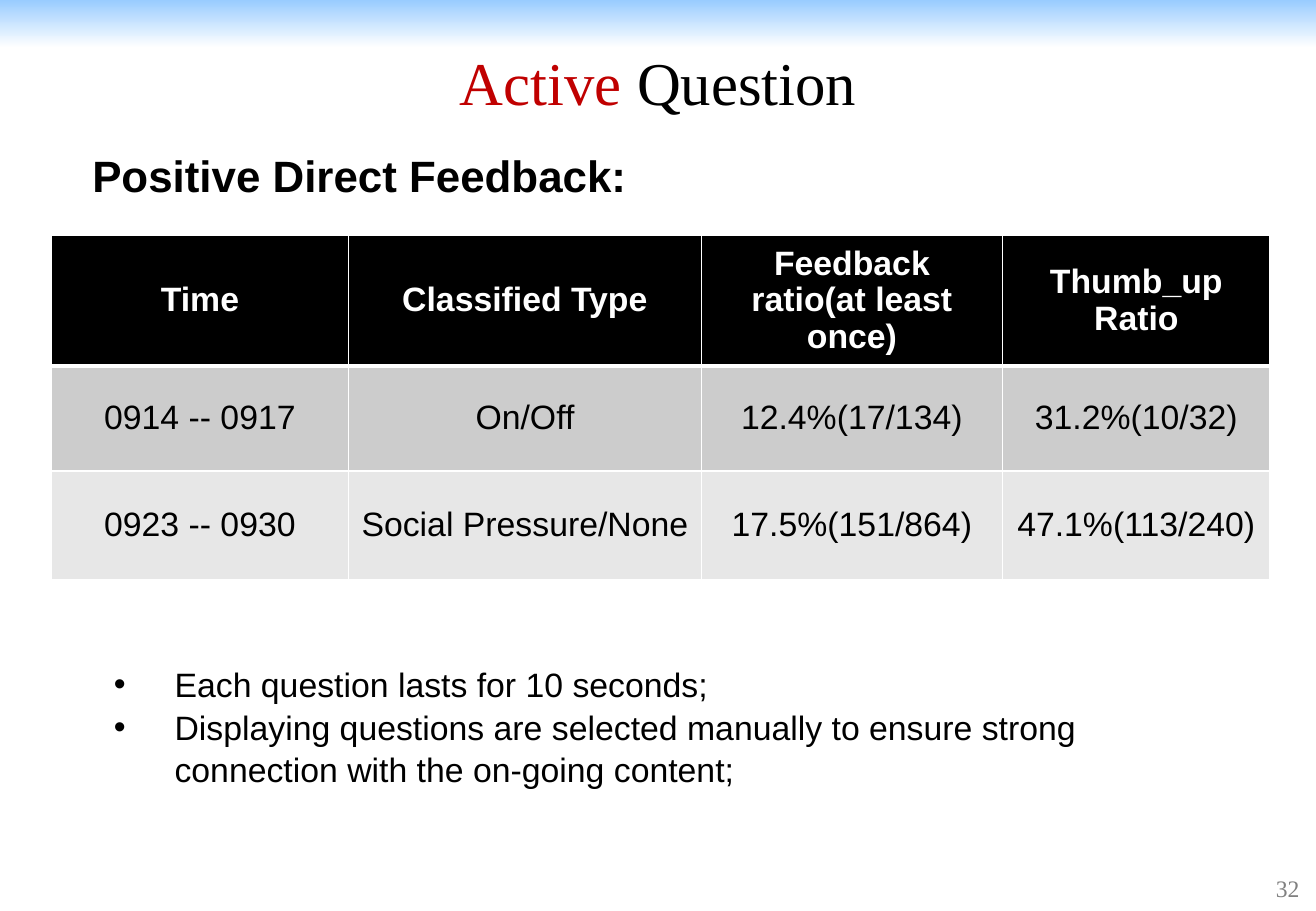
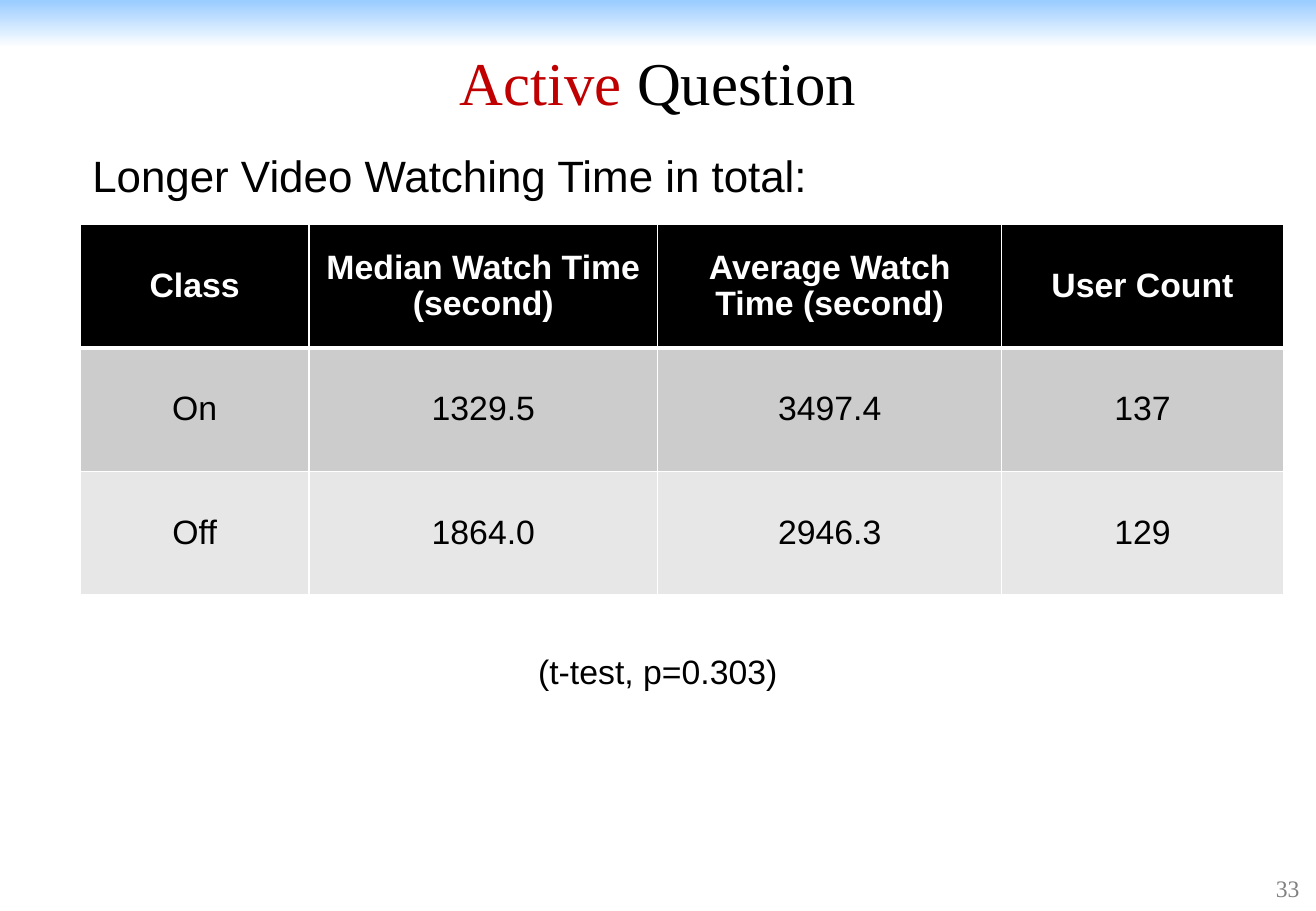
from lxml import etree
from pptx import Presentation
from pptx.dml.color import RGBColor
from pptx.enum.shapes import MSO_SHAPE
from pptx.enum.text import MSO_ANCHOR, PP_ALIGN
from pptx.oxml.ns import qn
from pptx.util import Cm, Pt

RECTANGLE = MSO_SHAPE.RECTANGLE
TOP, MIDDLE = MSO_ANCHOR.TOP, MSO_ANCHOR.MIDDLE
LEFT, CENTER = PP_ALIGN.LEFT, PP_ALIGN.CENTER

SANS, SERIF = "Arial", "Times New Roman"
COLORS = {
    "band": "99CCFF",
    "white": "FFFFFF",
    "black": "000000",
    "accent": "C00000",
    "number": "808080",
    "odd_row": "CCCCCC",
    "even_row": "E7E7E7",
}
SLIDE_WIDTH, SLIDE_HEIGHT = 27.51, 19.05


def rgb(color):
    return RGBColor.from_string(COLORS[color])


def write(paragraph, text, size=20, font=SANS, color="black", bold=False,
          align=LEFT, spacing=None):
    """Append a formatted run to the paragraph."""
    paragraph.alignment = align
    if spacing:
        paragraph.line_spacing = spacing
    run = paragraph.add_run()
    run.text = text
    run.font.size = Pt(size)
    run.font.name = font
    run.font.bold = bold
    run.font.color.rgb = rgb(color)


def add_frame(slide, left, top, width, height, anchor=TOP, wrap=True):
    box = slide.shapes.add_textbox(Cm(left), Cm(top), Cm(width), Cm(height))
    frame = box.text_frame
    frame.word_wrap = wrap
    frame.vertical_anchor = anchor
    return frame


def add_band(slide):
    band = slide.shapes.add_shape(RECTANGLE, 0, 0, Cm(SLIDE_WIDTH), Cm(1))
    band.shadow.inherit = False
    band.line.fill.background()
    band.fill.gradient()
    band.fill.gradient_angle = 270
    for stop, color in zip(band.fill.gradient_stops, ("band", "white")):
        stop.color.rgb = rgb(color)


def add_base_slide(prs, number, heading, bold=False):
    """Add a slide with the band, title, page number and heading."""
    slide = prs.slides.add_slide(prs.slide_layouts[6])
    add_band(slide)
    page = add_frame(slide, 26.42, 17.93, 1.08, 1.27, MIDDLE)
    write(page.paragraphs[0], str(number), size=14, font=SERIF, color="number")
    title = add_frame(slide, 0.76, 0.74, 26, 1.9, MIDDLE).paragraphs[0]
    for text, color in (("Active", "accent"), (" Question", "black")):
        write(title, text, size=36, font=SERIF, color=color, align=CENTER)
    intro = add_frame(slide, 1.68, 2.92, 25, 1.37)
    write(intro.paragraphs[0], heading, size=26, bold=bold, spacing=1.05)
    return slide


def set_borders(cell, **widths):
    """Draw white borders; widths are points by side: L, R, T, B."""
    properties = cell._tc.get_or_add_tcPr()
    for index, side in enumerate("LRTB"):
        line = etree.Element(qn(f"a:ln{side}"), w=str(Pt(widths.get(side, 1))))
        fill = etree.SubElement(line, qn("a:solidFill"))
        etree.SubElement(fill, qn("a:srgbClr"), val=COLORS["white"])
        properties.insert(index, line)


def add_data_table(slide, left, top, widths, heights, rows):
    table = slide.shapes.add_table(
        len(rows), len(widths), Cm(left), Cm(top),
        Cm(sum(widths)), Cm(sum(heights))).table
    table.horz_banding = False
    for column, width in zip(table.columns, widths):
        column.width = Cm(width)
    row_fills = ("black", "odd_row", "even_row")
    for r, (values, height) in enumerate(zip(rows, heights)):
        table.rows[r].height = Cm(height)
        header = r == 0
        for c, value in enumerate(values):
            cell = table.cell(r, c)
            cell.vertical_anchor = MIDDLE
            cell.fill.solid()
            cell.fill.fore_color.rgb = rgb(row_fills[r])
            set_borders(cell, T=3 if r == 1 else 1, B=3 if header else 1)
            write(cell.text_frame.paragraphs[0], value, bold=header,
                  color="white" if header else "black",
                  align=CENTER, spacing=0.97)


def add_bullets(slide, left, top, width, height, items):
    frame = add_frame(slide, left, top, width, height)
    for i, item in enumerate(items):
        paragraph = frame.add_paragraph() if i else frame.paragraphs[0]
        properties = paragraph._p.get_or_add_pPr()
        properties.set("marL", str(Cm(1.27)))
        properties.set("indent", str(Cm(-1.27)))
        etree.SubElement(properties, qn("a:buFont"), typeface=SANS)
        etree.SubElement(properties, qn("a:buChar"), char="•")
        write(paragraph, item, spacing=1.05)


def add_feedback_slide(prs):
    slide = add_base_slide(prs, 32, "Positive Direct Feedback:", bold=True)
    add_data_table(slide, 1.07, 4.93, (6.22, 7.37, 6.3, 5.59), (2.6, 2.2, 2.27), (
        ("Time", "Classified Type", "Feedback ratio(at least once)",
         "Thumb_up Ratio"),
        ("0914 -- 0917", "On/Off", "12.4%(17/134)", "31.2%(10/32)"),
        ("0923 -- 0930", "Social Pressure/None", "17.5%(151/864)",
         "47.1%(113/240)"),
    ))
    add_bullets(slide, 2.13, 13.72, 23.14, 3.68, (
        "Each question lasts for 10 seconds;",
        "Displaying questions are selected manually to ensure strong "
        "connection with the on-going content;",
    ))


def add_watch_time_slide(prs):
    slide = add_base_slide(prs, 33, "Longer Video Watching Time in total:")
    add_data_table(slide, 1.68, 4.7, (4.78, 7.29, 7.19, 5.89), (2.58,) * 3, (
        ("Class", "Median Watch Time (second)", "Average Watch Time (second)",
         "User Count"),
        ("On", "1329.5", "3497.4", "137"),
        ("Off", "1864.0", "2946.3", "129"),
    ))
    test_result = add_frame(slide, 11, 13.44, 5.54, 1.12, wrap=False)
    write(test_result.paragraphs[0], "(t-test, p=0.303)", spacing=1.05)


def main():
    prs = Presentation()
    prs.slide_width, prs.slide_height = Cm(SLIDE_WIDTH), Cm(SLIDE_HEIGHT)
    add_feedback_slide(prs)
    add_watch_time_slide(prs)
    prs.save("out.pptx")


if __name__ == "__main__":
    main()
